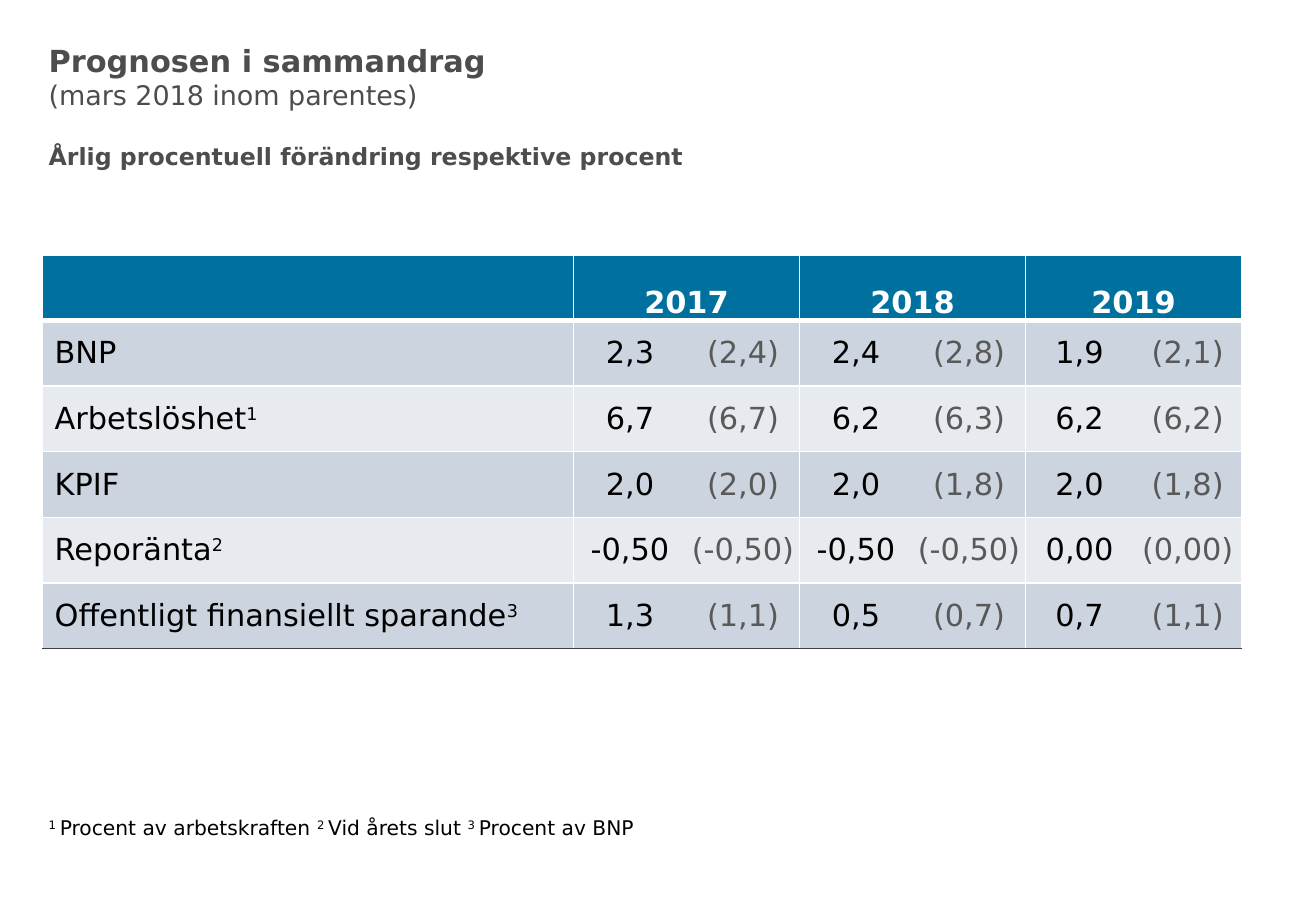
from lxml import etree
from pptx import Presentation
from pptx.dml.color import RGBColor
from pptx.enum.text import MSO_ANCHOR, MSO_AUTO_SIZE, PP_ALIGN
from pptx.oxml.ns import qn
from pptx.util import Inches, Pt

TOP, MIDDLE, BOTTOM = MSO_ANCHOR.TOP, MSO_ANCHOR.MIDDLE, MSO_ANCHOR.BOTTOM
LEFT, CENTER = PP_ALIGN.LEFT, PP_ALIGN.CENTER
NO_AUTOFIT = MSO_AUTO_SIZE.NONE

FONT = "DejaVu Sans"
COLORS = {
    "heading": "4D4D4D", "text": "000000", "earlier": "595959",
    "header": "00709E", "band_dark": "CCD5DF", "band_light": "E7EBF0",
    "rule": "FFFFFF", "bottom_rule": "404040",
}
HEADING_LINES = [  # text, size, bold, space before
    ("Prognosen i sammandrag", 18, True, 0),
    ("(mars 2018 inom parentes)", 16, False, 0),
    ("Årlig procentuell förändring respektive procent", 14, True, 18),
]
YEARS = ["2017", "2018", "2019"]
FORECAST = [  # indicator, footnote mark, (forecast, earlier forecast) per year
    ("BNP", "", ["2,3", "(2,4)", "2,4", "(2,8)", "1,9", "(2,1)"]),
    ("Arbetslöshet", "1", ["6,7", "(6,7)", "6,2", "(6,3)", "6,2", "(6,2)"]),
    ("KPIF", "", ["2,0", "(2,0)", "2,0", "(1,8)", "2,0", "(1,8)"]),
    ("Reporänta", "2", ["-0,50", "(-0,50)", "-0,50", "(-0,50)", "0,00", "(0,00)"]),
    ("Offentligt finansiellt sparande", "3",
     ["1,3", "(1,1)", "0,5", "(0,7)", "0,7", "(1,1)"]),
]
FOOTNOTES = [("1 ", "Procent av arbetskraften "), ("2 ", "Vid årets slut "),
             ("3 ", "Procent av BNP")]
COLUMN_WIDTHS = [4.37, 0.93, 0.93, 0.93, 0.93, 0.89, 0.89]
ROW_HEIGHT = 0.54


def style(paragraph, size, color, bold=False, align=LEFT):
    paragraph.alignment = align
    font = paragraph.font
    font.name, font.size, font.bold = FONT, Pt(size), bold
    font.color.rgb = RGBColor.from_string(COLORS[color])


def add_run(paragraph, text, raised=False):
    run = paragraph.add_run()
    run.text = text
    if raised:
        run._r.get_or_add_rPr().set("baseline", "30000")


def place(placeholder, box):
    """Move a placeholder to its box and return its emptied text frame."""
    placeholder.left, placeholder.top, placeholder.width, placeholder.height = (
        Inches(length) for length in box)
    frame = placeholder.text_frame
    frame.word_wrap, frame.auto_size = True, NO_AUTOFIT
    frame.vertical_anchor = TOP
    return frame


def add_heading(slide, box):
    frame = place(slide.shapes.title, box)
    for index, (text, size, bold, space) in enumerate(HEADING_LINES):
        line = frame.add_paragraph() if index else frame.paragraphs[0]
        style(line, size, "heading", bold)
        line.space_before = Pt(space)
        add_run(line, text)


def add_footnotes(slide, box):
    line = place(slide.placeholders[1], box).paragraphs[0]
    style(line, 12, "text")
    line.space_before = Pt(0)
    for mark, note in FOOTNOTES:
        add_run(line, mark, raised=True)
        add_run(line, note)


def set_borders(cell, sides):
    """Draw (colour, width) on each side; None leaves the side without a line."""
    properties = cell._tc.get_or_add_tcPr()
    for index, (side, rule) in enumerate(zip("LRTB", sides)):
        line = etree.Element(qn("a:ln" + side))
        if rule:
            color, width = rule
            line.set("w", str(Pt(width)))
            fill = etree.SubElement(line, qn("a:solidFill"))
            etree.SubElement(fill, qn("a:srgbClr")).set("val", COLORS[color])
        else:
            etree.SubElement(line, qn("a:noFill"))
        properties.insert(index, line)


def format_cell(cell, fill, anchor, sides, padded=False):
    cell.fill.solid()
    cell.fill.fore_color.rgb = RGBColor.from_string(COLORS[fill])
    cell.vertical_anchor = anchor
    if not padded:
        cell.margin_left = cell.margin_right = 0
        cell.margin_top = cell.margin_bottom = 0
    set_borders(cell, sides)


def add_forecast_table(slide, left, top):
    row_count = len(FORECAST) + 1
    table = slide.shapes.add_table(
        row_count, len(COLUMN_WIDTHS), Inches(left), Inches(top),
        Inches(sum(COLUMN_WIDTHS)), Inches(ROW_HEIGHT * row_count)).table
    for column, width in zip(table.columns, COLUMN_WIDTHS):
        column.width = Inches(width)
    for row in table.rows:
        row.height = Inches(ROW_HEIGHT)
    thin, thick = ("rule", 1), ("rule", 3)

    # Header: one year above each pair of columns
    for column in range(len(COLUMN_WIDTHS)):
        format_cell(table.cell(0, column), "header", BOTTOM,
                    (thin, thin, thin, thick))
    for index, year in enumerate(YEARS):
        first = 1 + 2 * index
        heading = table.cell(0, first)
        heading.merge(table.cell(0, first + 1))
        line = heading.text_frame.paragraphs[0]
        style(line, 18, "rule", True, CENTER)
        add_run(line, year)

    # Body: forecast in black, earlier forecast in grey
    for row, (indicator, mark, values) in enumerate(FORECAST, start=1):
        band = "band_dark" if row % 2 else "band_light"
        above = thick if row == 1 else thin
        below = ("bottom_rule", 1) if row == len(FORECAST) else thin
        for column, text in enumerate([indicator] + values):
            is_label = column == 0
            is_earlier = column > 0 and column % 2 == 0
            is_current = column % 2 == 1
            cell = table.cell(row, column)
            format_cell(cell, band, MIDDLE,
                        (None if is_earlier else thin,
                         None if is_current else thin, above, below), is_label)
            line = cell.text_frame.paragraphs[0]
            style(line, 18, "earlier" if is_earlier else "text",
                  align=LEFT if is_label else CENTER)
            add_run(line, text)
            if is_label and mark:
                add_run(line, mark, raised=True)


def main():
    deck = Presentation()
    deck.slide_width, deck.slide_height = Inches(10.83), Inches(7.5)
    slide = deck.slides.add_slide(deck.slide_layouts[0])
    add_heading(slide, (0.3, 0.3, 10, 0.77))
    add_footnotes(slide, (0.3, 6.66, 9.53, 0.68))
    add_forecast_table(slide, 0.35, 2.1)
    deck.save("out.pptx")


if __name__ == "__main__":
    main()
